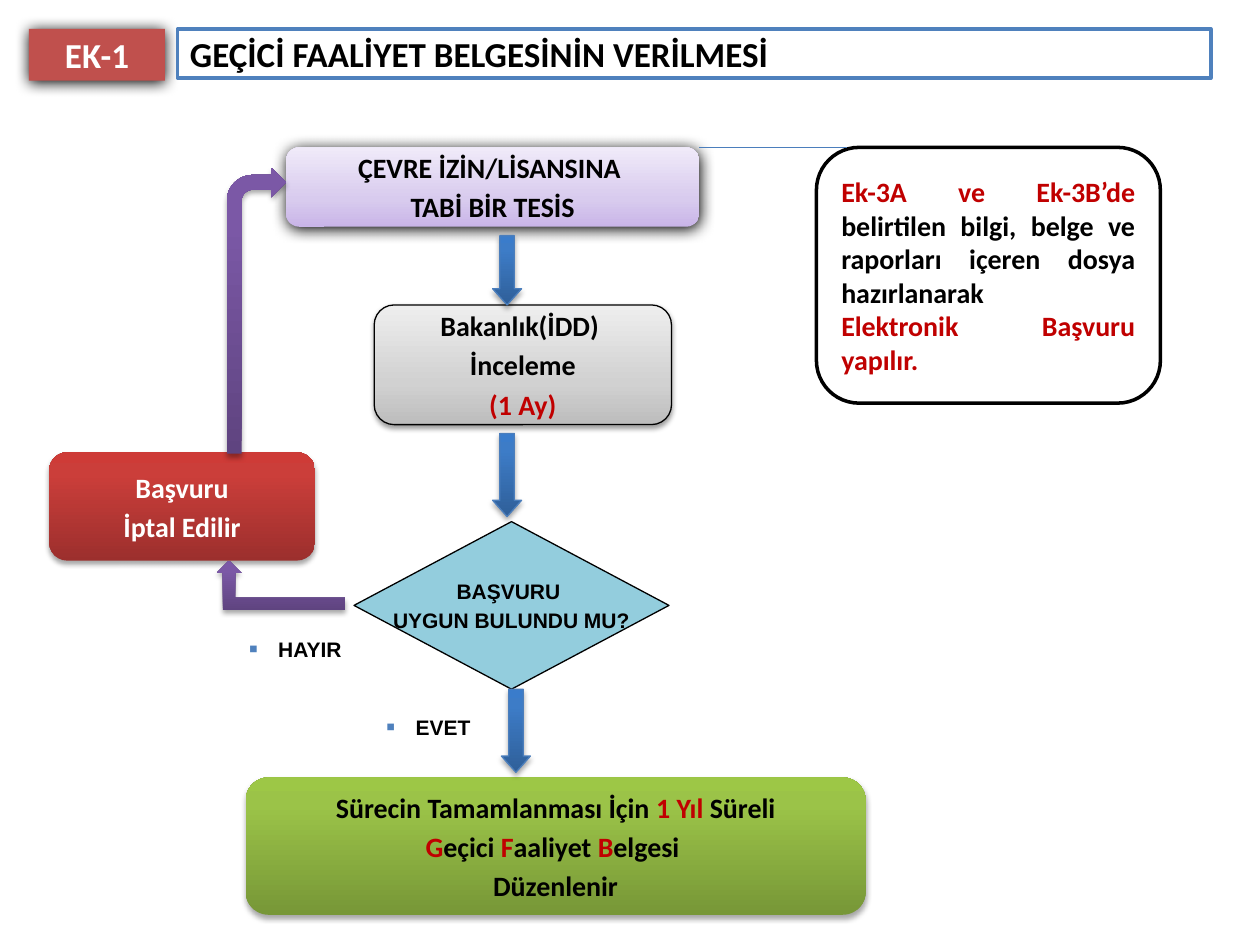
from lxml import etree
from pptx import Presentation
from pptx.dml.color import RGBColor
from pptx.enum.shapes import MSO_CONNECTOR, MSO_SHAPE
from pptx.enum.text import MSO_ANCHOR, MSO_AUTO_SIZE, PP_ALIGN
from pptx.oxml.ns import qn
from pptx.util import Inches, Pt

RECT, ROUND = MSO_SHAPE.RECTANGLE, MSO_SHAPE.ROUNDED_RECTANGLE
DECISION, DOWN = MSO_SHAPE.FLOWCHART_DECISION, MSO_SHAPE.DOWN_ARROW
BENT, BENT_UP = MSO_SHAPE.BENT_ARROW, MSO_SHAPE.BENT_UP_ARROW
LEFT, CENTER, JUSTIFY = PP_ALIGN.LEFT, PP_ALIGN.CENTER, PP_ALIGN.JUSTIFY

BLACK, WHITE, RED, BLUE, ARROW_EDGE = "000000", "FFFFFF", "C00000", "4F81BD", "4B7EBC"

# Gradients: (position %, colour), running from bottom to top
LILAC = [(0, "C9B5E8"), (35, "D8CBEE"), (100, "F0EAF9")]
GREY = [(0, "BDBDBD"), (35, "D1D1D1"), (100, "EEEEEE")]
BLUES = [(0, "2F5F99"), (80, "3D7CC7"), (100, "3A7CCB")]
GREENS = [(0, "779737"), (80, "9BC348"), (100, "9DC746")]
REDS = [(0, "9C2F2D"), (80, "CB3E3A"), (100, "CE3B37")]
PURPLES = [(0, "5F4480"), (80, "7B58A6"), (100, "7C57A8")]

# Shadows falling straight down: opacity %, blur pt, distance pt
GLOW, SOFT, GREY_SOFT = (100, 8.5, 1), (35, 3.1, 1.8), (38, 3.1, 1.6)

# Text: paragraphs of (wording, colour) runs
FACILITY = [[("ÇEVRE İZİN/LİSANSINA ", BLACK)], [("TABİ BİR TESİS", BLACK)]]
REVIEW = [[("Bakanlık(İDD) ", BLACK)], [("İnceleme", BLACK)], [("(1 Ay)", RED)]]
QUESTION = [[("BAŞVURU ", BLACK)], [("UYGUN BULUNDU MU?", BLACK)]]
CANCELLED = [[("Başvuru", WHITE)], [("İptal Edilir", WHITE)]]
ISSUED = [
    [("Sürecin Tamamlanması İçin ", BLACK), ("1 Yıl ", RED), ("Süreli", BLACK)],
    [("G", RED), ("eçici ", BLACK), ("F", RED), ("aaliyet ", BLACK),
     ("B", RED), ("elgesi ", BLACK)],
    [("Düzenlenir", BLACK)],
]
FILE_NOTE = [
    [("Ek-3A ve Ek-3B’de ", RED),
     ("belirtilen bilgi, belge ve raporları içeren dosya hazırlanarak", BLACK)],
    [("Elektronik Başvuru yapılır.", RED)],
]
TAG = [[("EK-1", WHITE)]]
TITLE = [[("GEÇİCİ FAALİYET BELGESİNİN VERİLMESİ", BLACK)]]

# Boxes: preset, (left, top, width, height), fill, line, shadow, text, text format
BOXES = [
    (ROUND, (2.27, 1.17, 3.28, 0.63), LILAC, None, GLOW, FACILITY, {}),
    (RECT, (0.23, 0.23, 1.08, 0.41), "C0504D", None, GLOW, TAG, {"size": 20, "wrap": True}),
    (DECISION, (2.81, 4.14, 2.5, 1.33), "93CDDD", (BLACK, 0.75), None, QUESTION,
     {"size": 12, "font": "Arial"}),
    (ROUND, (1.95, 6.17, 4.92, 1.09), GREENS, None, SOFT, ISSUED, {}),
    (ROUND, (6.48, 1.17, 2.73, 2.03), WHITE, (BLACK, 2), None, FILE_NOTE,
     {"align": JUSTIFY, "wrap": True, "before": 0}),
    (ROUND, (2.97, 2.42, 2.36, 0.95), GREY, (BLACK, 0.75), GREY_SOFT, REVIEW, {}),
    (ROUND, (0.39, 3.59, 2.11, 0.86), REDS, None, SOFT, CANCELLED, {}),
    (RECT, (1.41, 0.23, 8.2, 0.39), WHITE, (BLUE, 2), None, TITLE,
     {"size": 20, "align": LEFT, "wrap": True}),
]
DOWN_ARROWS = [(3.91, 1.87, 0.55), (3.91, 3.44, 0.66), (3.98, 5.47, 0.66)]  # left, top, height
BENT_ARROWS = [(BENT, (1.8, 1.33, 0.47, 2.27), False), (BENT_UP, (1.72, 4.45, 1.02, 0.39), True)]
ANSWERS = [("EVET", (2.97, 5.62, 1.02, 0.3)), ("HAYIR", (1.88, 5, 1.02, 0.31))]


def rgb(value):
    return RGBColor.from_string(value)


def add_xml(parent, tag, **attrs):
    child = etree.SubElement(parent, qn(tag))
    for name, value in attrs.items():
        child.set(name, str(value))
    return child


def paint(sp, fill, line, shadow):
    if isinstance(fill, str):
        sp.fill.solid()
        sp.fill.fore_color.rgb = rgb(fill)
    else:
        sp.fill.gradient()
        sp.fill.gradient_angle = 90
        stops = sp._element.spPr.find(".//" + qn("a:gsLst"))
        for stop in list(stops):
            stops.remove(stop)
        for position, color in fill:
            add_xml(add_xml(stops, "a:gs", pos=position * 1000), "a:srgbClr", val=color)
    if line:
        sp.line.color.rgb, sp.line.width = rgb(line[0]), Pt(line[1])
    else:
        sp.line.fill.background()
    sp.shadow.inherit = False
    if shadow:
        alpha, blur, dist = shadow
        effects = sp._element.spPr.find(qn("a:effectLst"))
        outer = add_xml(effects, "a:outerShdw", blurRad=Pt(blur), dist=Pt(dist),
                        dir=90 * 60000, algn="ctr", rotWithShape=0)
        add_xml(add_xml(outer, "a:srgbClr", val=BLACK), "a:alpha", val=alpha * 1000)


def write(tf, paragraphs, size=16, font="Calibri", align=CENTER, wrap=False, before=20):
    tf.word_wrap = wrap
    tf.vertical_anchor = MSO_ANCHOR.MIDDLE
    for i, runs in enumerate(paragraphs):
        p = tf.add_paragraph() if i else tf.paragraphs[0]
        p.alignment = align
        if before:
            spacing = add_xml(p._p.get_or_add_pPr(), "a:spcBef")
            add_xml(spacing, "a:spcPct", val=before * 1000)
        for text, color in runs:
            r = p.add_run()
            r.text = text
            for name, value in {"size": Pt(size), "name": font, "bold": True}.items():
                setattr(r.font, name, value)
            r.font.color.rgb = rgb(color)


def add_shape(s, preset, box, fill, line=None, shadow=None):
    sp = s.shapes.add_shape(preset, *map(Inches, box))
    paint(sp, fill, line, shadow)
    return sp


def add_answer(s, text, box):
    tf = s.shapes.add_textbox(*map(Inches, box)).text_frame
    write(tf, [[(text, BLACK)]], size=12, font="Arial", align=LEFT, wrap=True, before=50)
    tf.vertical_anchor = MSO_ANCHOR.TOP
    tf.auto_size = MSO_AUTO_SIZE.SHAPE_TO_FIT_TEXT
    pPr = tf.paragraphs[0]._p.get_or_add_pPr()
    pPr.set("marL", str(Inches(0.23)))
    pPr.set("indent", str(-Inches(0.23)))
    add_xml(add_xml(pPr, "a:buClr"), "a:srgbClr", val=BLUE)
    add_xml(pPr, "a:buSzPct", val=65000)
    add_xml(pPr, "a:buFont", typeface="Arial")
    add_xml(pPr, "a:buChar", char="■")


def main():
    prs = Presentation()
    prs.slide_width, prs.slide_height = Inches(10), Inches(7.5)
    s = prs.slides.add_slide(prs.slide_layouts[6])

    # Boxes of the flow, with the heading
    for preset, box, fill, line, shadow, text, text_format in BOXES:
        sp = add_shape(s, preset, box, fill, line, shadow)
        write(sp.text_frame, text, **text_format)

    # Arrows between the steps
    for left, top, height in DOWN_ARROWS:
        sp = add_shape(s, DOWN, (left, top, 0.23, height), BLUES, (ARROW_EDGE, 0.75), SOFT)
        sp.adjustments[0], sp.adjustments[1] = 0.5, 0.56
    for preset, box, flipped in BENT_ARROWS:
        sp = add_shape(s, preset, box, PURPLES, shadow=SOFT)
        if flipped:
            sp._element.spPr.xfrm.set("flipH", "1")

    # Answers to the decision
    for text, box in ANSWERS:
        add_answer(s, text, box)

    # Line from the facility to the application note
    ends = map(Inches, (5.55, 1.17, 6.72, 1.17))
    link = s.shapes.add_connector(MSO_CONNECTOR.STRAIGHT, *ends)
    link.line.color.rgb, link.line.width = rgb(ARROW_EDGE), Pt(0.75)
    add_xml(link._element.spPr, "a:effectLst")

    prs.save("out.pptx")


if __name__ == "__main__":
    main()
